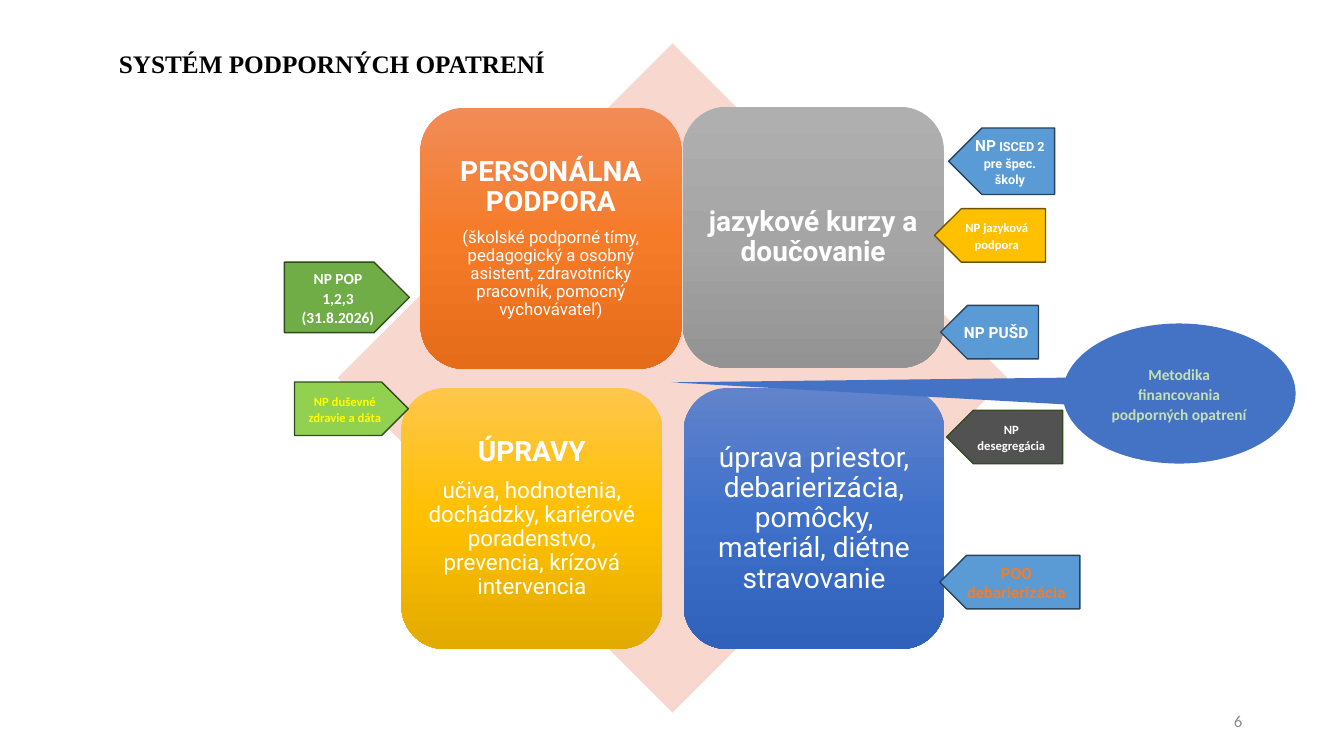
import copy

import pptx
import pptx.dml.color
import pptx.enum.shapes
import pptx.enum.text
import pptx.util

RGBColor = pptx.dml.color.RGBColor
SHAPE = pptx.enum.shapes.MSO_SHAPE
ALIGN = pptx.enum.text.PP_ALIGN
ANCHOR = pptx.enum.text.MSO_ANCHOR

BLACK = RGBColor(0x00, 0x00, 0x00)
WHITE = RGBColor(0xFF, 0xFF, 0xFF)
GREY = RGBColor(0x8C, 0x8C, 0x8C)
CHARCOAL = RGBColor(0x52, 0x52, 0x52)
PINK = RGBColor(0xF8, 0xD7, 0xCE)
ORANGE = RGBColor(0xED, 0x7D, 0x31)
YELLOW = RGBColor(0xFF, 0xFF, 0x00)
GOLD = RGBColor(0xFF, 0xC0, 0x00)
GOLD_EDGE = RGBColor(0x70, 0x54, 0x00)
SKY = RGBColor(0x5B, 0x9B, 0xD5)
SKY_EDGE = RGBColor(0x28, 0x44, 0x5D)
BLUE = RGBColor(0x44, 0x72, 0xC4)
GREEN = RGBColor(0x70, 0xAD, 0x47)
LIME = RGBColor(0x92, 0xD0, 0x50)
MINT = RGBColor(0xC5, 0xE0, 0xB3)
GREEN_EDGE = RGBColor(0x31, 0x4C, 0x1F)
ORANGE_FADE = [RGBColor(0xF1, 0x8C, 0x57), RGBColor(0xF6, 0x7B, 0x28), RGBColor(0xE5, 0x6C, 0x19)]
GREY_FADE = [RGBColor(0xAF, 0xAF, 0xAF), RGBColor(0xA5, 0xA5, 0xA5), RGBColor(0x93, 0x93, 0x93)]
GOLD_FADE = [RGBColor(0xFF, 0xC6, 0x4B), GOLD, RGBColor(0xE3, 0xAB, 0x00)]
BLUE_FADE = [RGBColor(0x61, 0x83, 0xCB), RGBColor(0x3E, 0x70, 0xCA), RGBColor(0x30, 0x62, 0xBB)]

prs = pptx.Presentation()
prs.slide_width = pptx.util.Inches(13.33)
prs.slide_height = pptx.util.Inches(7.5)
s = prs.slides.add_slide(prs.slide_layouts[5])


def box(x, y, w, h):
    """Turn percentages of the slide's width and height into lengths."""
    sides = (prs.slide_width, prs.slide_height) * 2
    return [int(side * share / 100) for side, share in zip(sides, (x, y, w, h))]


def write(tf, text, size=11, font="Calibri", color=WHITE, bold=True, align=ALIGN.CENTER,
          anchor=ANCHOR.MIDDLE, spacing=1.07, after=8, same_line=False):
    """Add a paragraph, or a further run to the last one; a newline breaks the line."""
    tf.word_wrap = True
    tf.vertical_anchor = anchor
    p = tf.paragraphs[-1] if same_line or not tf.text else tf.add_paragraph()
    p.alignment = align
    p.line_spacing = spacing
    p.space_after = pptx.util.Pt(after)
    for i, part in enumerate(text.split("\n")):
        if i:
            p.add_line_break()
        r = p.add_run()
        r.text = part
        r.font.size = pptx.util.Pt(size)
        r.font.name = font
        r.font.bold = bold
        r.font.color.rgb = color


# Title
sp = s.shapes.title
sp.left, sp.top, sp.width, sp.height = box(8.1, 5.73, 49.96, 5.33)
sp.text_frame.auto_size = pptx.enum.text.MSO_AUTO_SIZE.NONE
write(sp.text_frame, "SYSTÉM PODPORNÝCH OPATRENÍ", size=18, font="Times New Roman",
      color=BLACK, align=ALIGN.LEFT, anchor=ANCHOR.TOP, spacing=1.0, after=0)

# Slide number
sp = s.shapes.add_textbox(*box(70.67, 92.67, 22.51, 5.33))
write(sp.text_frame, "6", size=12, color=GREY, bold=False, align=ALIGN.RIGHT, spacing=1.0, after=0)

# Diamond behind the four tiles
sp = s.shapes.add_shape(SHAPE.DIAMOND, *box(25.13, 5.73, 49.81, 88.53))
sp.shadow.inherit = False
sp.fill.solid()
sp.fill.fore_color.rgb = PINK
sp.line.fill.background()

# Tiles: left, top, gradient, paragraphs of (text, size, bold)
tiles = [
    (31.28, 14.27, ORANGE_FADE, [
        ("PERSONÁLNA PODPORA", 20, True),
        ("(školské podporné tímy, pedagogický a osobný asistent, zdravotnícky pracovník, "
         "pomocný vychovávateľ)", 12, False)]),
    (50.79, 14.13, GREY_FADE, [("jazykové kurzy a doučovanie", 20, True)]),
    (29.86, 51.33, GOLD_FADE, [
        ("ÚPRAVY", 20, True),
        ("učiva, hodnotenia, dochádzky, kariérové poradenstvo, prevencia, krízová intervencia",
         16, False)]),
    (50.86, 51.33, BLUE_FADE, [
        ("úprava priestor, debarierizácia, pomôcky, materiál, diétne stravovanie", 20, False)]),
]
for x, y, fade, paragraphs in tiles:
    sp = s.shapes.add_shape(SHAPE.ROUNDED_RECTANGLE, *box(x, y, 19.43, 34.53))
    sp.shadow.inherit = False
    sp.line.fill.background()
    sp.fill.gradient()
    sp.fill.gradient_angle = 270
    stops = sp._element.spPr.find(".//" + pptx.oxml.ns.qn("a:gsLst"))
    stops.append(copy.deepcopy(stops[-1]))
    for stop, position, color in zip(sp.fill.gradient_stops, (0, 0.5, 1), fade):
        stop.position = position
        stop.color.rgb = color
    tf = sp.text_frame
    tf.margin_left = tf.margin_right = tf.margin_top = tf.margin_bottom = pptx.util.Inches(0.08)
    for text, size, bold in paragraphs:
        write(tf, text, size=size, font="Roboto", bold=bold, spacing=0.9)

# Project tags: place, points left, fill, edge, runs of (text, format)
tags = [
    ((69.99, 40.4, 7.28, 7.07), True, SKY, SKY_EDGE, [("NP PUŠD", dict(font="Roboto"))]),
    ((69.54, 27.6, 8.25, 7.07), True, GOLD, GOLD_EDGE, [("NP jazyková podpora", dict(size=9))]),
    ((21.16, 34.67, 9.3, 9.33), False, GREEN, GREEN_EDGE, [("NP POP\n1,2,3\n(31.8.2026)", {})]),
    ((21.91, 50.53, 8.48, 7.07), False, LIME, GREEN_EDGE,
     [("NP duševné zdravie a dáta", dict(size=9, color=YELLOW))]),
    ((69.92, 73.47, 10.43, 7.07), True, SKY, SKY_EDGE,
     [("POO debarierizácia", dict(font="Roboto", color=ORANGE))]),
    ((70.44, 54.27, 8.63, 7.07), True, CHARCOAL, GREEN_EDGE, [("NP desegregácia", dict(size=9))]),
    ((70.59, 16.93, 7.88, 8.8), True, SKY, SKY_EDGE,
     [("NP", dict(font="Roboto")),
      (" ISCED 2 pre špec. školy", dict(font="Roboto", size=9, same_line=True))]),
]
for place, points_left, fill, edge, runs in tags:
    sp = s.shapes.add_shape(SHAPE.PENTAGON, *box(*place))
    sp.shadow.inherit = False
    sp.fill.solid()
    sp.fill.fore_color.rgb = fill
    sp.line.color.rgb = edge
    sp.line.width = pptx.util.Pt(1)
    if points_left:
        sp._element.spPr.xfrm.set("flipH", "1")
    for text, style in runs:
        write(sp.text_frame, text, **style)

# Callout pointing at the centre of the tiles
sp = s.shapes.add_shape(SHAPE.OVAL_CALLOUT, *box(79.07, 42.8, 17.33, 18.53))
sp.shadow.inherit = False
sp.adjustments[0] = -2.18
sp.adjustments[1] = -0.08
sp.fill.solid()
sp.fill.fore_color.rgb = BLUE
sp.line.fill.background()
write(sp.text_frame, "Metodika financovania podporných opatrení", color=MINT)

prs.save("out.pptx")
